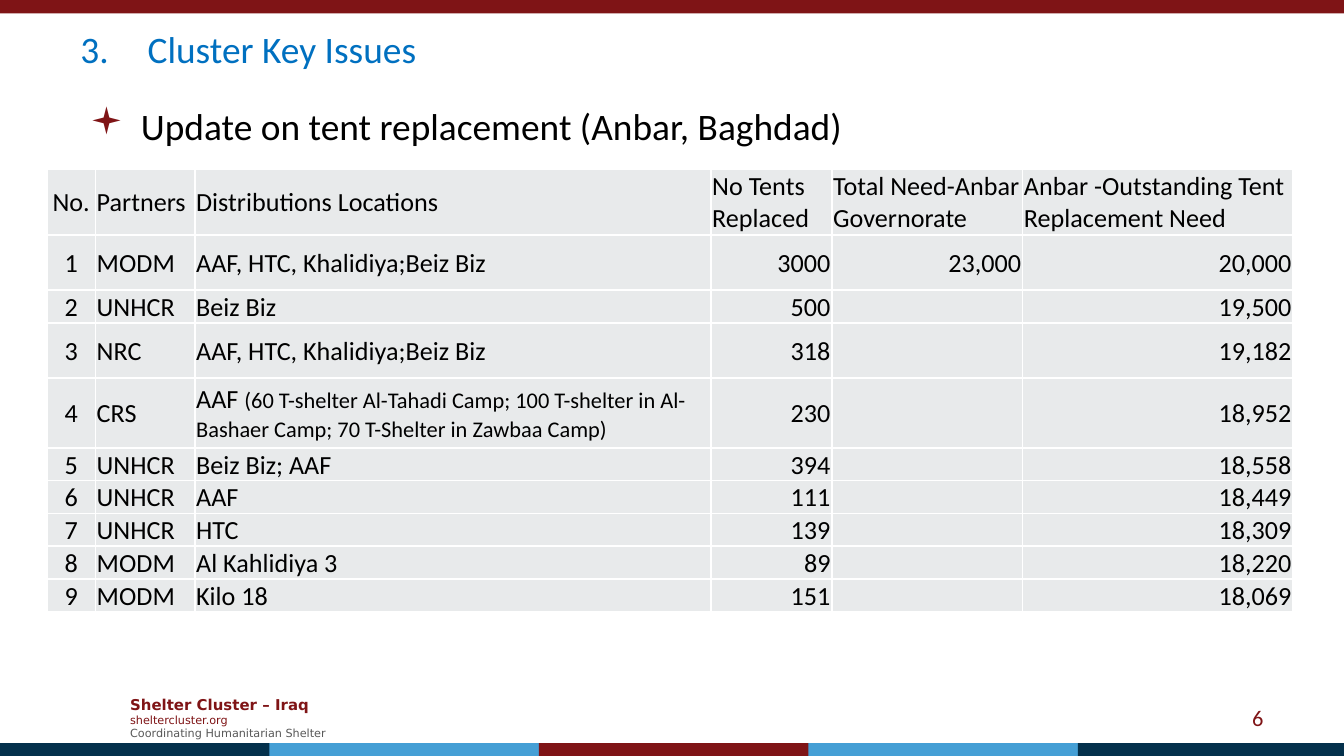
"""Build the tent replacement slide of the cluster key issues deck."""
from lxml import etree
from pptx import Presentation
from pptx import util as u
from pptx.dml.color import RGBColor
from pptx.enum import shapes, text
from pptx.oxml import ns

COLORS = {
    "maroon": "7F1416", "navy": "04314C", "sky": "459FD5", "title": "0070C0",
    "black": "000000", "gray": "595959", "cell": "E8EAEB", "white": "FFFFFF",
}
LEFT, CENTER, RIGHT = text.PP_ALIGN.LEFT, text.PP_ALIGN.CENTER, text.PP_ALIGN.RIGHT
COLUMN_WIDTHS = [0.36, 0.74, 3.84, 0.9, 1.42, 2.01]
ROW_HEIGHTS = [0.49, 0.41, 0.24, 0.41, 0.52] + [0.24] * 5
COLUMN_ALIGNMENTS = [CENTER, LEFT, LEFT, RIGHT, RIGHT, RIGHT]
HEADERS = ["No.", "Partners", "Distributions Locations", "No Tents Replaced",
           "Total Need-Anbar Governorate", "Anbar -Outstanding Tent Replacement Need"]
CAMP_DETAIL = ("(60 T-shelter Al-Tahadi Camp; 100 T-shelter in Al-Bashaer Camp; "
               "70 T-Shelter in Zawbaa Camp)")
DISTRIBUTIONS = [
    ("MODM", "AAF, HTC, Khalidiya;Beiz Biz", "3000", "23,000", "20,000"),
    ("UNHCR", "Beiz Biz", "500", "", "19,500"),
    ("NRC", "AAF, HTC, Khalidiya;Beiz Biz", "318", "", "19,182"),
    ("CRS", "AAF ", "230", "", "18,952"),
    ("UNHCR", "Beiz Biz; AAF", "394", "", "18,558"),
    ("UNHCR", "AAF", "111", "", "18,449"),
    ("UNHCR", "HTC", "139", "", "18,309"),
    ("MODM", "Al Kahlidiya 3", "89", "", "18,220"),
    ("MODM", "Kilo 18", "151", "", "18,069"),
]


def rgb(color):
    return RGBColor.from_string(COLORS[color])


def add_run(paragraph, content, size, color="black", font="Calibri", bold=False):
    run = paragraph.add_run()
    run.text = content
    run.font.size = u.Pt(size)
    run.font.name = font
    run.font.bold = bold
    run.font.color.rgb = rgb(color)


def add_bar(slide, left, top, width, color):
    bar = slide.shapes.add_shape(
        shapes.MSO_SHAPE.RECTANGLE, u.Inches(left), u.Inches(top), u.Inches(width), u.Inches(0.1))
    bar.shadow.inherit = False
    bar.fill.solid()
    bar.fill.fore_color.rgb = rgb(color)
    bar.line.fill.background()


def add_text_box(slide, left, top, width, height, anchor=text.MSO_ANCHOR.MIDDLE):
    box = slide.shapes.add_textbox(*map(u.Inches, (left, top, width, height)))
    box.text_frame.word_wrap = True
    box.text_frame.vertical_anchor = anchor
    return box.text_frame


def add_bullet(paragraph, indent, tag, color=None, font=None, **attributes):
    properties = paragraph._p.get_or_add_pPr()
    properties.set("marL", str(u.Inches(indent)))
    properties.set("indent", str(-u.Inches(indent)))
    if color:
        bullet_color = etree.SubElement(properties, ns.qn("a:buClr"))
        etree.SubElement(bullet_color, ns.qn("a:srgbClr"), val=COLORS[color])
    if font:
        etree.SubElement(properties, ns.qn("a:buFont"), typeface=font)
    etree.SubElement(properties, ns.qn(tag), **attributes)


def add_footer(slide):
    frame = add_text_box(slide, 0.87, 5.12, 1.73, 0.44)
    frame.word_wrap = False
    lines = [("Shelter Cluster – Iraq", 8, "maroon", True),
             ("sheltercluster.org", 6, "maroon", False),
             ("Coordinating Humanitarian Shelter", 6, "gray", False)]
    for index, (content, size, color, bold) in enumerate(lines):
        paragraph = frame.add_paragraph() if index else frame.paragraphs[0]
        add_run(paragraph, content, size, color, "DejaVu Sans", bold)
    number = add_text_box(slide, 7.17, 5.19, 2.33, 0.3).paragraphs[0]
    number.alignment = RIGHT
    add_run(number, "6", 12, "maroon")


def style_cell(cell):
    cell.fill.solid()
    cell.fill.fore_color.rgb = rgb("cell")
    cell.vertical_anchor = text.MSO_ANCHOR.MIDDLE
    cell.margin_left = cell.margin_top = cell.margin_right = u.Inches(0.01)
    cell.margin_bottom = 0
    properties = cell._tc.get_or_add_tcPr()
    for index, side in enumerate("LRTB"):
        border = etree.Element(ns.qn(f"a:ln{side}"), w=str(u.Pt(1)))
        fill = etree.SubElement(border, ns.qn("a:solidFill"))
        etree.SubElement(fill, ns.qn("a:srgbClr"), val=COLORS["white"])
        properties.insert(index, border)


def fill_cell(cell, content, alignment):
    style_cell(cell)
    paragraph = cell.text_frame.paragraphs[0]
    paragraph.alignment = alignment
    if content:
        add_run(paragraph, content, 14)
    else:
        etree.SubElement(paragraph._p, ns.qn("a:endParaRPr"), sz="1400")


def add_distribution_table(slide):
    table = slide.shapes.add_table(
        len(ROW_HEIGHTS), len(COLUMN_WIDTHS), u.Inches(0.35), u.Inches(1.26),
        u.Inches(sum(COLUMN_WIDTHS)), u.Inches(sum(ROW_HEIGHTS))).table
    for column, width in zip(table.columns, COLUMN_WIDTHS):
        column.width = u.Inches(width)
    for row, height in zip(table.rows, ROW_HEIGHTS):
        row.height = u.Inches(height)
    for cell, header in zip(table.rows[0].cells, HEADERS):
        fill_cell(cell, header, CENTER if header == "No." else LEFT)
    for number, values in enumerate(DISTRIBUTIONS, 1):
        contents = (str(number), *values)
        for cell, content, alignment in zip(table.rows[number].cells, contents, COLUMN_ALIGNMENTS):
            fill_cell(cell, content, alignment)
    add_run(table.cell(4, 2).text_frame.paragraphs[0], CAMP_DETAIL, 12)


def main():
    presentation = Presentation()
    presentation.slide_width = u.Inches(10)
    presentation.slide_height = presentation.slide_width * 9 // 16
    slide = presentation.slides.add_slide(presentation.slide_layouts[6])

    add_bar(slide, 0, 0, 10, "maroon")
    for index, color in enumerate(["navy", "sky", "maroon", "sky", "navy"]):
        add_bar(slide, index * 2.005, 5.53, 2.01, color)
    add_footer(slide)

    update = add_text_box(slide, 0.57, 0.72, 9, 4.31, text.MSO_ANCHOR.TOP).paragraphs[0]
    add_bullet(update, 0.38, "a:buChar", "maroon", "Wingdings", char="▪")
    add_run(update, "Update on tent replacement (Anbar, Baghdad)", 20)
    add_distribution_table(slide)

    title = add_text_box(slide, 0.5, 0.16, 8.88, 0.4).paragraphs[0]
    add_bullet(title, 0.5, "a:buAutoNum", type="arabicPeriod", startAt="3")
    add_run(title, "Cluster Key Issues", 20, "title")
    presentation.save("out.pptx")


if __name__ == "__main__":
    main()
